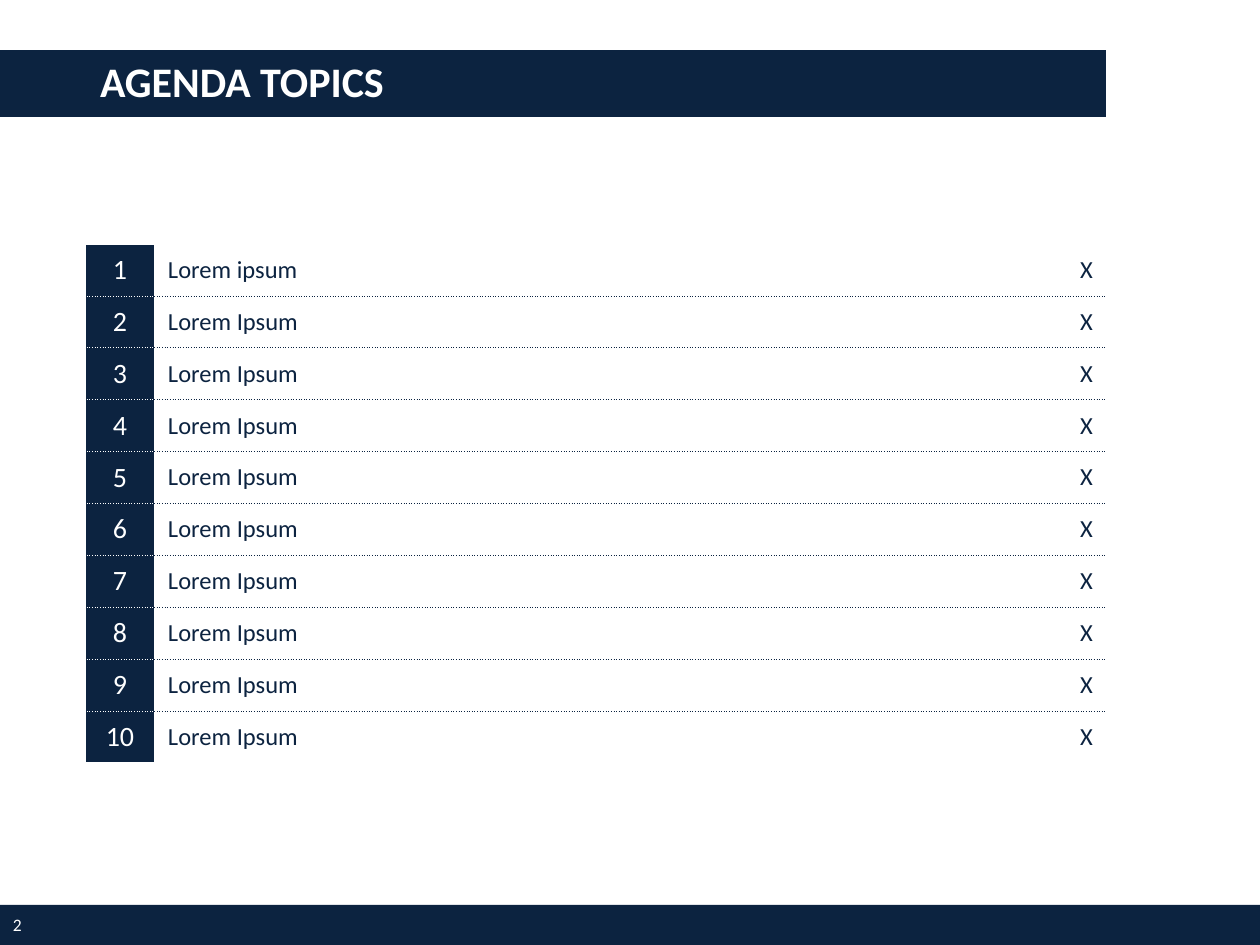
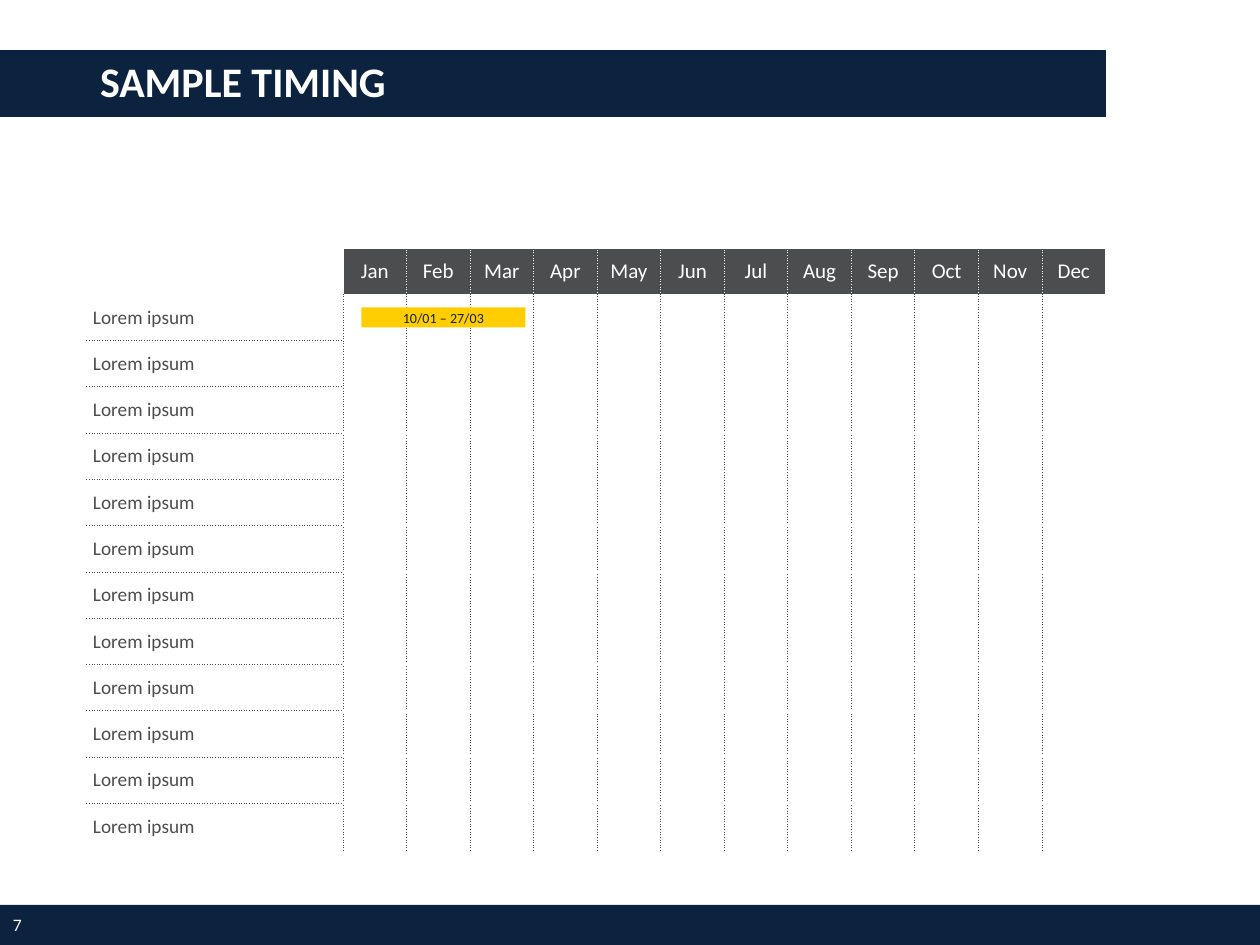
from collections import namedtuple

from lxml.etree import SubElement
from pptx import Presentation
from pptx.dml.color import RGBColor
from pptx.enum.shapes import MSO_SHAPE
from pptx.enum.text import MSO_ANCHOR, MSO_AUTO_SIZE, PP_ALIGN
from pptx.oxml.ns import qn
from pptx.util import Pt

Box = namedtuple("Box", "left top width height")
Edge = namedtuple("Edge", "color points dash")

COLORS = {"navy": "0C2340", "white": "FFFFFF", "gray": "4B4D4E", "yellow": "FFCD00"}
FONT = "Calibri"
EMU_PER_PX = 914400 / 126

PAGE = Box(0, 0, 1260, 945)
TITLE = Box(0, 50, 1106, 67)
FOOTER = Box(0, 905, 1260, 40)
AGENDA = Box(85, 244, 1021, 519)
TIMING = Box(87, 248, 1019, 602)

WHITE_LINE = Edge("white", 1, "solid")
WHITE_DOTS = Edge("white", 0.5, "dot")
NAVY_DOTS = Edge("navy", 0.5, "dot")
GRAY_DOTS = Edge("gray", 0.5, "dot")

TOPICS = ["Lorem ipsum"] + ["Lorem Ipsum"] * 9
MONTHS = "Jan Feb Mar Apr May Jun Jul Aug Sep Oct Nov Dec".split()
TASKS = ["Lorem ipsum"] * 12


def px(length):
    return round(length * EMU_PER_PX)


def scaled(box):
    return [px(length) for length in box]


def rgb(name):
    return RGBColor.from_string(COLORS[name])


def set_margins(target, left, top, right, bottom):
    target.margin_left, target.margin_top = px(left), px(top)
    target.margin_right, target.margin_bottom = px(right), px(bottom)


def write(frame, text, size, color, align=PP_ALIGN.LEFT, bold=False):
    para = frame.paragraphs[0]
    para.alignment = align
    span = para.add_run()
    span.text = text
    span.font.name = FONT
    span.font.size = Pt(size)
    span.font.bold = bold
    span.font.color.rgb = rgb(color)
    return para


def add_block(page, box, color):
    block = page.shapes.add_shape(MSO_SHAPE.RECTANGLE, *scaled(box))
    block.shadow.inherit = False
    block.fill.solid()
    block.fill.fore_color.rgb = rgb(color)
    block.line.fill.background()
    return block


def add_title(page, box, text):
    title = page.shapes.title
    title.left, title.top, title.width, title.height = scaled(box)
    title.fill.solid()
    title.fill.fore_color.rgb = rgb("navy")
    frame = title.text_frame
    frame.auto_size = MSO_AUTO_SIZE.NONE
    frame.vertical_anchor = MSO_ANCHOR.MIDDLE
    set_margins(frame, 100, 6, 38, 6)
    write(frame, text, 24, "white", bold=True).line_spacing = 0.9


def add_footer(page, box, number):
    add_block(page, box, "navy")
    label = page.shapes.add_textbox(*scaled(box._replace(width=87)))
    frame = label.text_frame
    frame.word_wrap = True
    frame.vertical_anchor = MSO_ANCHOR.MIDDLE
    set_margins(frame, 13, 0, 13, 0)
    write(frame, str(number), 10, "white")


def add_page(deck, title, number):
    page = deck.slides.add_slide(deck.slide_layouts[5])
    add_footer(page, FOOTER, number)
    add_title(page, TITLE, title)
    return page


def add_grid(page, box, row_count, widths):
    grid = page.shapes.add_table(row_count, len(widths), *scaled(box)).table
    grid.first_row = grid.horz_banding = False
    for column, width in zip(grid.columns, widths):
        column.width = px(width)
    for row in grid.rows:
        row.height = px(box.height / row_count)
    return grid


def style_cell(cell, edges, fill=None, margins=(0, 0, 0, 0)):
    properties = cell._tc.get_or_add_tcPr()
    for side in "LRTB":
        edge = edges.get(side)
        if edge is None:
            continue
        line = SubElement(properties, qn(f"a:ln{side}"), w=str(Pt(edge.points)))
        paint = SubElement(line, qn("a:solidFill"))
        SubElement(paint, qn("a:srgbClr"), val=COLORS[edge.color])
        SubElement(line, qn("a:prstDash"), val=edge.dash)
    if fill:
        cell.fill.solid()
        cell.fill.fore_color.rgb = rgb(fill)
    else:
        cell.fill.background()
    cell.vertical_anchor = MSO_ANCHOR.MIDDLE
    set_margins(cell, *margins)


def add_agenda(page, box):
    number_width, page_width = 70, 82
    topic_width = box.width - number_width - page_width
    grid = add_grid(page, box, len(TOPICS), [number_width, topic_width, page_width])
    last = len(TOPICS) - 1
    for index, topic in enumerate(TOPICS):
        columns = [
            (str(index + 1), 16, "white", PP_ALIGN.CENTER, "navy", 0, WHITE_DOTS),
            (topic, 14, "navy", PP_ALIGN.LEFT, None, 13, NAVY_DOTS),
            ("X", 14, "navy", PP_ALIGN.RIGHT, None, 13, NAVY_DOTS),
        ]
        for column, (text, size, color, align, fill, inset, dots) in enumerate(columns):
            cell = grid.cell(index, column)
            edges = {
                "L": WHITE_LINE,
                "R": WHITE_LINE,
                "T": dots if index else WHITE_LINE,
                "B": dots if index < last else WHITE_LINE,
            }
            style_cell(cell, edges, fill, (inset, 0, inset, 0))
            write(cell.text_frame, text, size, color, align)


def add_timing(page, box):
    label_width = 256
    month_width = (box.width - label_width) / len(MONTHS)
    row_height = box.height / (len(TASKS) + 1)
    widths = [label_width] + [month_width] * len(MONTHS)
    grid = add_grid(page, box, len(TASKS) + 1, widths)
    margins = (6, 6, 6, 6)
    last = len(MONTHS)

    style_cell(grid.cell(0, 0), dict.fromkeys("LRTB", WHITE_LINE))
    for column, month in enumerate(MONTHS, 1):
        cell = grid.cell(0, column)
        edges = {
            "L": WHITE_DOTS if column > 1 else WHITE_LINE,
            "R": WHITE_DOTS if column < last else WHITE_LINE,
            "T": WHITE_LINE,
        }
        style_cell(cell, edges, "gray", margins)
        write(cell.text_frame, month, 12, "white", PP_ALIGN.CENTER)

    for row, task in enumerate(TASKS, 1):
        label = grid.cell(row, 0)
        edges = {
            "L": WHITE_LINE,
            "R": GRAY_DOTS,
            "T": GRAY_DOTS if row > 1 else WHITE_LINE,
            "B": GRAY_DOTS if row < len(TASKS) else WHITE_LINE,
        }
        style_cell(label, edges, margins=margins)
        write(label.text_frame, task, 11, "gray")
        for column in range(1, last + 1):
            edges = {"L": GRAY_DOTS, "R": GRAY_DOTS if column < last else None}
            style_cell(grid.cell(row, column), edges)

    start, end = 9 / 31, 2 + 27 / 31
    bar_height = 20
    bar = Box(
        box.left + label_width + start * month_width,
        box.top + 1.5 * row_height - bar_height / 2,
        (end - start) * month_width,
        bar_height,
    )
    frame = add_block(page, bar, "yellow").text_frame
    frame.vertical_anchor = MSO_ANCHOR.MIDDLE
    set_margins(frame, 5, 5, 5, 5)
    write(frame, "10/01 – 27/03", 8, "navy", PP_ALIGN.CENTER)


def main():
    deck = Presentation()
    deck.slide_width, deck.slide_height = px(PAGE.width), px(PAGE.height)
    add_agenda(add_page(deck, "AGENDA TOPICS", 2), AGENDA)
    add_timing(add_page(deck, "SAMPLE TIMING", 7), TIMING)
    deck.save("out.pptx")


if __name__ == "__main__":
    main()
